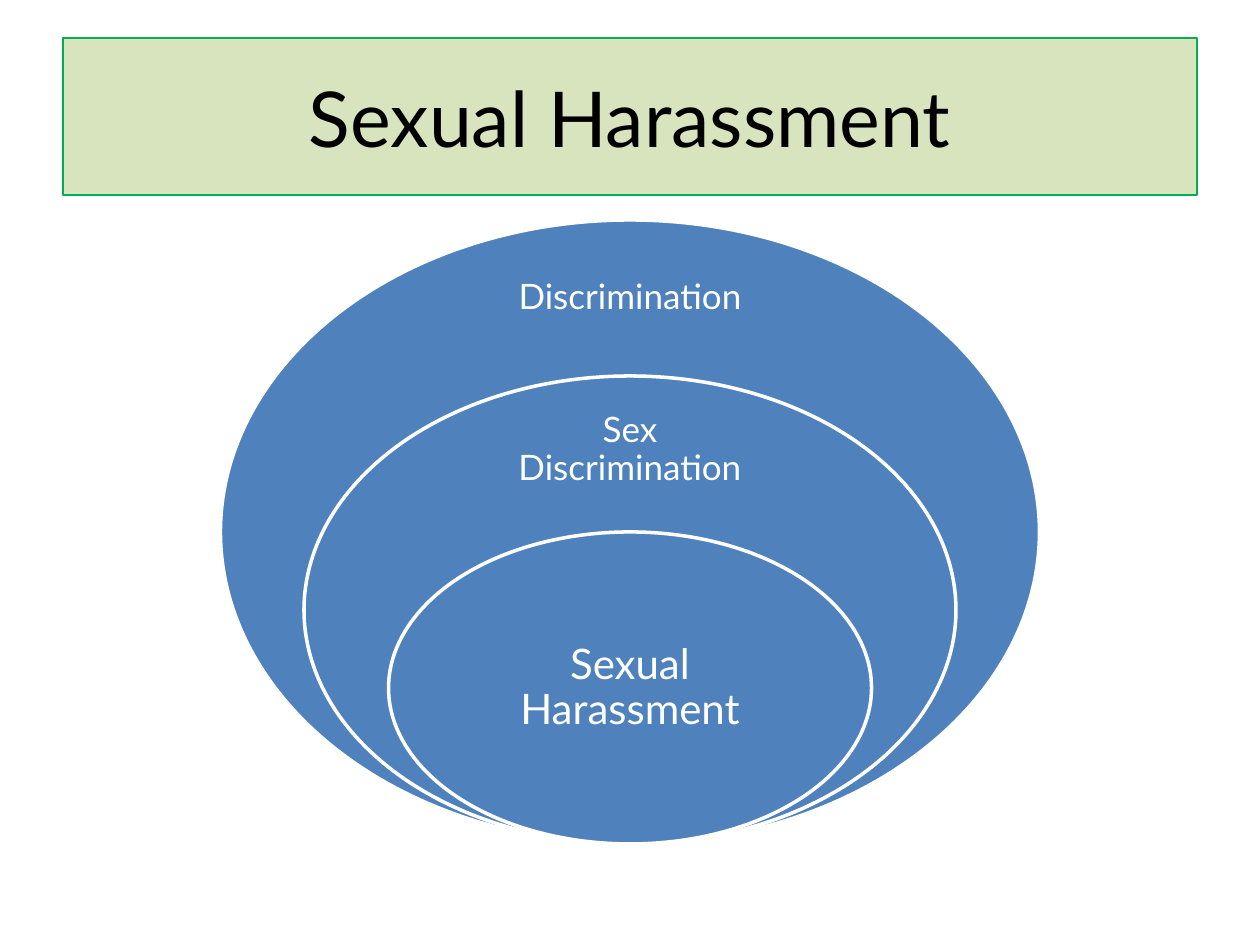
import pptx
import pptx.dml.color
import pptx.enum.shapes
import pptx.enum.text
import pptx.util

PX_PER_INCH = 126
FONT = "Lato"
COLOURS = {
    "title_fill": "D7E4BD",
    "title_line": "00B050",
    "title_text": "000000",
    "ellipse": "4F81BD",
    "white": "FFFFFF",
}
CENTRE_X = 630
BOTTOM = 844
# label, ellipse size, label top, label size, label inset, font size
RINGS = [
    ("Discrimination", (819, 624), 252, (286, 93), 20, 20),
    ("Sex Discrimination", (652, 468), 406, (304, 88), 20, 20),
    ("Sexual Harassment", (483, 312), 610, (341, 156), 24, 24),
]


def px(length):
    return pptx.util.Emu(round(length * 914400 / PX_PER_INCH))


def colour(name):
    return pptx.dml.color.RGBColor.from_string(COLOURS[name])


class SlideBuilder:
    """Holds the shared style and the slide being filled."""

    def __init__(self, presentation):
        self.slide = presentation.slides.add_slide(presentation.slide_layouts[5])
        self.diagram = None

    def paint(self, shape, fill, line, line_width):
        shape.fill.solid()
        shape.fill.fore_color.rgb = colour(fill)
        shape.line.color.rgb = colour(line)
        shape.line.width = pptx.util.Pt(line_width)

    def set_text(self, shape, text, size, font_colour):
        frame = shape.text_frame
        frame.text = text
        frame.word_wrap = True
        frame.auto_size = pptx.enum.text.MSO_AUTO_SIZE.NONE
        frame.vertical_anchor = pptx.enum.text.MSO_ANCHOR.MIDDLE
        paragraph = frame.paragraphs[0]
        paragraph.alignment = pptx.enum.text.PP_ALIGN.CENTER
        font = paragraph.runs[0].font
        font.name = FONT
        font.size = pptx.util.Pt(size)
        font.color.rgb = colour(font_colour)
        return frame

    def title(self, text, left, top, width, height):
        shape = self.slide.shapes.title
        shape.left, shape.top = px(left), px(top)
        shape.width, shape.height = px(width), px(height)
        self.paint(shape, "title_fill", "title_line", 0.75)
        self.set_text(shape, text, 44, "title_text")

    def start_diagram(self):
        self.diagram = self.slide.shapes.add_group_shape()

    def ellipse(self, width, height):
        """Add an ellipse resting on the diagram's common bottom point."""
        shape = self.diagram.shapes.add_shape(
            pptx.enum.shapes.MSO_SHAPE.OVAL,
            px(CENTRE_X - width / 2), px(BOTTOM - height), px(width), px(height))
        shape.shadow.inherit = False
        self.paint(shape, "ellipse", "white", 2)

    def label(self, text, top, width, height, inset, size):
        box = self.diagram.shapes.add_textbox(
            px(CENTRE_X - width / 2), px(top), px(width), px(height))
        frame = self.set_text(box, text, size, "white")
        frame.margin_left = frame.margin_right = px(inset)
        frame.margin_top = frame.margin_bottom = px(inset)
        frame.paragraphs[0].line_spacing = 0.9


def main():
    presentation = pptx.Presentation()
    presentation.slide_width = px(1260)
    presentation.slide_height = px(945)
    builder = SlideBuilder(presentation)
    builder.title("Sexual Harassment", 63, 38, 1134, 157)
    builder.start_diagram()
    for text, ellipse_size, top, label_size, inset, font_size in RINGS:
        builder.ellipse(*ellipse_size)
        builder.label(text, top, *label_size, inset, font_size)
    presentation.save("out.pptx")


if __name__ == "__main__":
    main()
